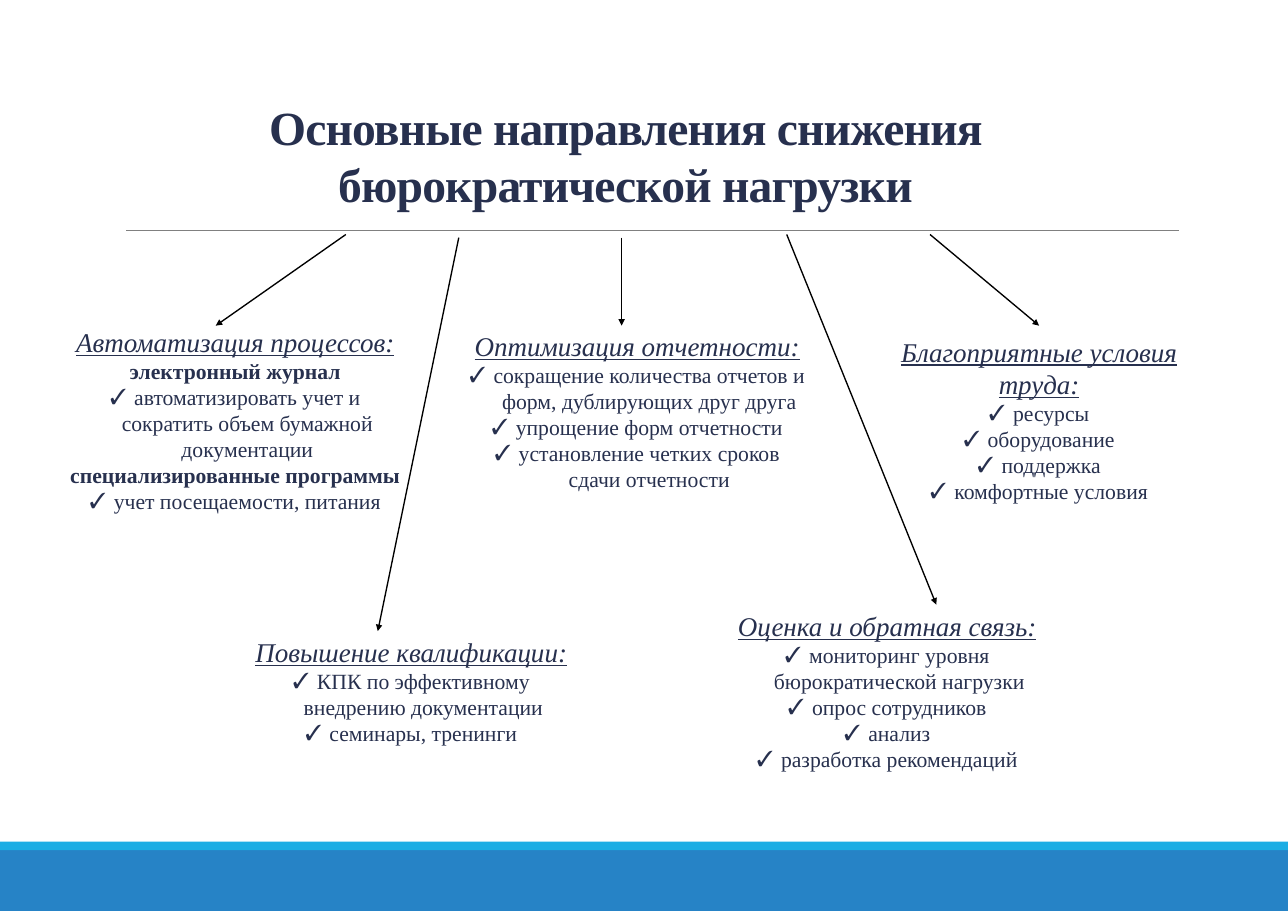
from lxml import etree
from pptx import Presentation
from pptx import util as u
from pptx.dml.color import RGBColor
from pptx.enum import shapes, text
from pptx.oxml.ns import qn

FONT = "Times New Roman"
INK = "27304E"
WHITE = "FFFFFF"
BOX_W = 4.58

# Each direction: left, top, height, heading, lines (text, is a bullet)
DIRECTIONS = [
    (0.73, 4.03, 2.71, "Автоматизация процессов:", [
        ("электронный журнал", False),
        ("автоматизировать учет и сократить объем бумажной документации", True),
        ("специализированные программы", False),
        ("учет посещаемости, питания", True)]),
    (5.89, 4.02, 2.5, "Оптимизация отчетности:", [
        ("сокращение количества отчетов и форм, дублирующих друг друга", True),
        ("упрощение форм отчетности", True),
        ("установление четких сроков сдачи отчетности", True)]),
    (11.05, 4.03, 2.71, "Благоприятные условия труда:", [
        ("ресурсы", True),
        ("оборудование", True),
        ("поддержка", True),
        ("комфортные условия", True)]),
    (2.99, 7.51, 2.71, "Повышение квалификации:", [
        ("КПК по эффективному внедрению документации", True),
        ("семинары, тренинги", True)]),
    (9.1, 7.51, 2.71, "Оценка и обратная связь:", [
        ("мониторинг уровня бюрократической нагрузки", True),
        ("опрос сотрудников", True),
        ("анализ", True),
        ("разработка рекомендаций", True)]),
]

ARROWS = [
    (4.44, 3.01, 2.77, 4.18),
    (7.98, 3.05, 7.98, 4.18),
    (11.94, 3.01, 13.34, 4.18),
    (10.1, 3.01, 12.02, 7.76),
    (5.89, 3.05, 4.85, 8.1),
]


def rgb(value):
    return RGBColor.from_string(value)


def add_run(p, words, size, bold=False, heading=False):
    r = p.add_run()
    r.text = words
    r.font.name = FONT
    r.font.size = u.Pt(size)
    r.font.color.rgb = rgb(INK)
    r.font.bold = bold
    r.font.italic = heading
    r.font.underline = heading
    return r


def add_check_bullet(p):
    pPr = p._p.get_or_add_pPr()
    pPr.set("marL", str(u.Inches(0.31)))
    pPr.set("indent", str(u.Inches(-0.31)))
    etree.SubElement(pPr, qn("a:buFont")).set("typeface", FONT)
    etree.SubElement(pPr, qn("a:buChar")).set("char", "✓")


def add_rect(s, x, y, w, h, fill):
    sp = s.shapes.add_shape(shapes.MSO_SHAPE.RECTANGLE, u.Inches(x), u.Inches(y),
                            u.Inches(w), u.Inches(h))
    sp.shadow.inherit = False
    sp.fill.solid()
    sp.fill.fore_color.rgb = rgb(fill)
    sp.line.fill.background()
    return sp


def add_line(s, x1, y1, x2, y2, color, width, arrow=False):
    cxn = s.shapes.add_connector(shapes.MSO_CONNECTOR.STRAIGHT, u.Inches(x1), u.Inches(y1),
                                 u.Inches(x2), u.Inches(y2))
    cxn.line.color.rgb = rgb(color)
    cxn.line.width = u.Pt(width)
    if arrow:
        etree.SubElement(cxn.line._get_or_add_ln(), qn("a:tailEnd")).set("type", "triangle")
    etree.SubElement(cxn._element.spPr, qn("a:effectLst"))


def add_frame(s, x, y, w, h):
    """Footer bands and the rule under the title, within the slide's box."""
    add_rect(s, x, y + h - 0.78, w, 0.78, "2683C6")
    add_rect(s, x, y + h - 0.89, w, 0.11, "1CADE4")
    add_line(s, x + 1.62, y + 2.96, x + w - 1.4, y + 2.96, "808080", 0.5)


def add_title(s, x, y, w, h):
    sp = s.shapes.title
    sp.left, sp.top, sp.width, sp.height = (u.Inches(v) for v in (x, y, w, h))
    tf = sp.text_frame
    tf.word_wrap = True
    tf.auto_size = text.MSO_AUTO_SIZE.NONE
    tf.vertical_anchor = text.MSO_ANCHOR.TOP
    tf.margin_left = tf.margin_right = tf.margin_bottom = 0
    tf.margin_top = u.Inches(0.21)
    p = tf.paragraphs[0]
    p.alignment = text.PP_ALIGN.CENTER
    p.space_before = u.Pt(1)
    p._p.get_or_add_pPr().set("marL", str(u.Inches(0.11)))
    r = add_run(p, "Основные направления снижения бюрократической нагрузки", 44, bold=True)
    r.font._element.set("spc", "-80")


def add_direction(s, x, y, w, h, heading, lines):
    sp = add_rect(s, x, y, w, h, WHITE)
    sp.line.color.rgb = rgb(WHITE)
    sp.line.width = u.Pt(1.25)
    tf = sp.text_frame
    tf.word_wrap = True
    tf.vertical_anchor = text.MSO_ANCHOR.MIDDLE
    p = tf.paragraphs[0]
    p.alignment = text.PP_ALIGN.CENTER
    add_run(p, heading, 25, heading=True)
    for words, bulleted in lines:
        p = tf.add_paragraph()
        p.alignment = text.PP_ALIGN.CENTER
        if bulleted:
            add_check_bullet(p)
        add_run(p, words, 20, bold=not bulleted)


def main():
    prs = Presentation()
    prs.slide_width, prs.slide_height = u.Mm(420), u.Mm(297)  # A3 landscape
    s = prs.slides.add_slide(prs.slide_layouts[5])
    add_frame(s, 0, 0, prs.slide_width.inches, prs.slide_height.inches)
    add_title(s, 1.1, 1.05, 13.75, 2.95)
    for x, y, h, heading, lines in DIRECTIONS:
        add_direction(s, x, y, BOX_W, h, heading, lines)
    for ends in ARROWS:
        add_line(s, *ends, "000000", 1.25, arrow=True)
    prs.save("out.pptx")


if __name__ == "__main__":
    main()
